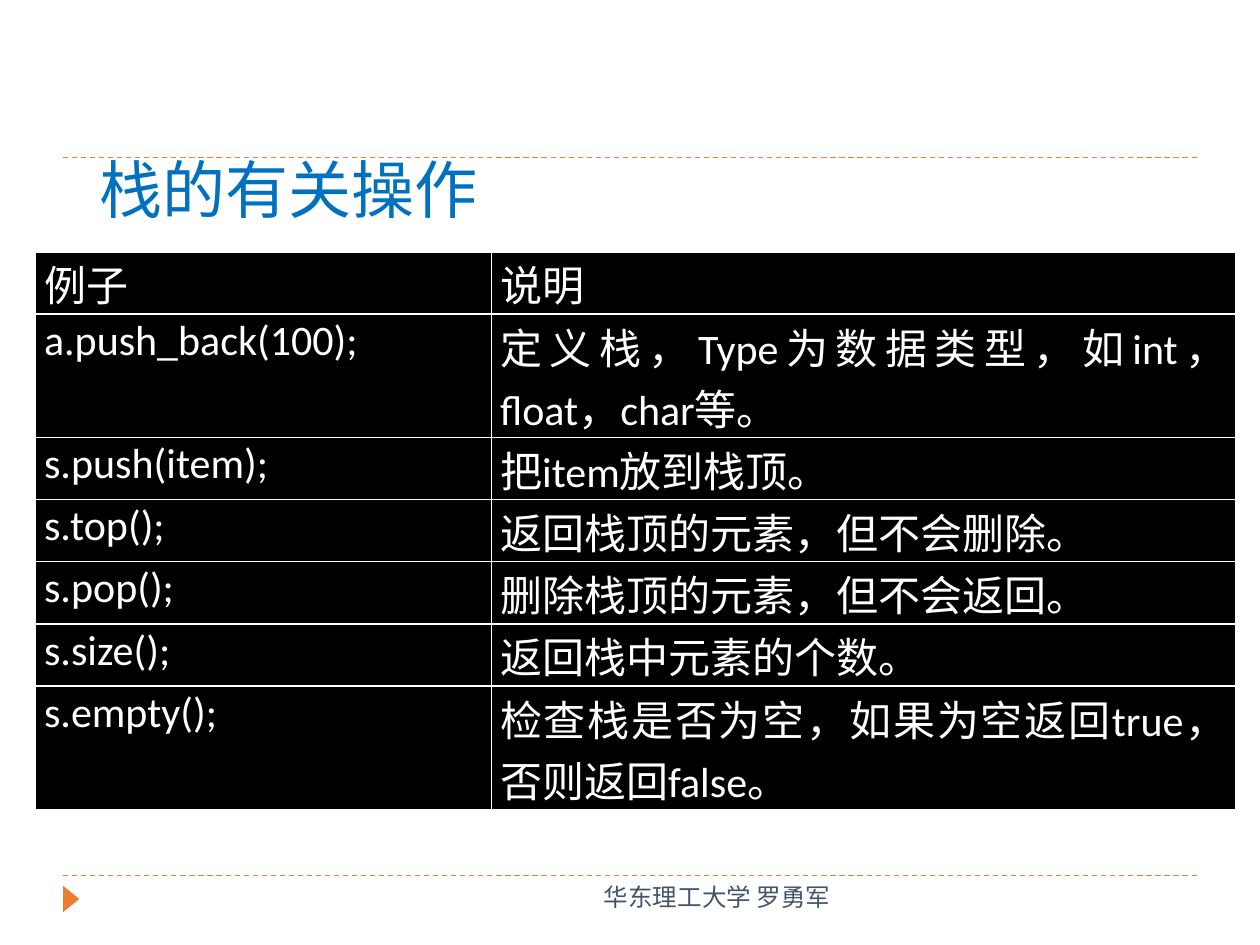
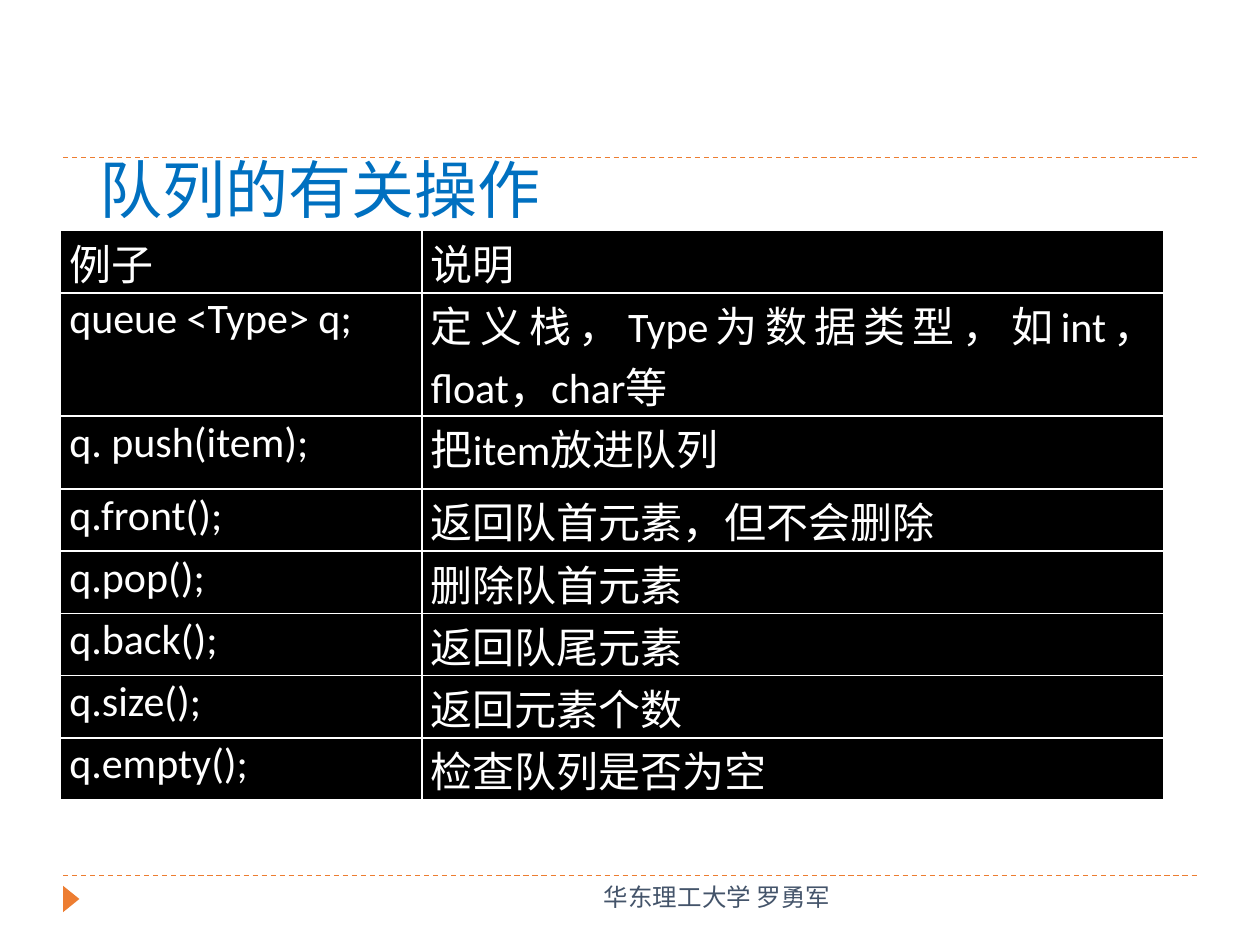
import pptx
import pptx.util
import pptx.dml.color
import pptx.enum.dml
import pptx.enum.shapes
import pptx.enum.text
import pptx.oxml.ns
import lxml.etree

SCALE = 9144  # EMU in one px, 100 px to the inch
FONT = "Calibri"
BLUE = pptx.dml.color.RGBColor(0x00, 0x70, 0xC0)
ORANGE = pptx.dml.color.RGBColor(0xED, 0x7D, 0x31)
SLATE = pptx.dml.color.RGBColor(0x44, 0x54, 0x6A)
BLACK = pptx.dml.color.RGBColor(0, 0, 0)
WHITE = pptx.dml.color.RGBColor(255, 255, 255)
ALIGN = pptx.enum.text.PP_ALIGN

STACK = [
    ("例子", "说明"),
    ("a.push_back(100);", "定义栈，Type为数据类型，如int，float，char等。"),
    ("s.push(item);", "把item放到栈顶。"),
    ("s.top();", "返回栈顶的元素，但不会删除。"),
    ("s.pop();", "删除栈顶的元素，但不会返回。"),
    ("s.size();", "返回栈中元素的个数。"),
    ("s.empty();", "检查栈是否为空，如果为空返回true，否则返回false。"),
]
QUEUE = [
    ("例子", "说明"),
    ("queue <Type> q;", "定义栈，Type为数据类型，如int，float，char等"),
    ("q. push(item);", "把item放进队列"),
    ("q.front();", "返回队首元素，但不会删除"),
    ("q.pop();", "删除队首元素"),
    ("q.back();", "返回队尾元素"),
    ("q.size();", "返回元素个数"),
    ("q.empty();", "检查队列是否为空"),
]


def px(*sizes):
    return [pptx.util.Emu(size * SCALE) for size in sizes]


def write(frame, text, size, color, align):
    frame.text = text
    para = frame.paragraphs[0]
    para.alignment = align
    font = para.font
    font.name, font.size, font.bold = FONT, pptx.util.Pt(size), False
    font.color.rgb = color
    return para


def add_rule(slide, y):
    rule = slide.shapes.add_connector(
        pptx.enum.shapes.MSO_CONNECTOR.STRAIGHT, *px(50, y, 950, y))
    rule.line.color.rgb = ORANGE
    rule.line.width = pptx.util.Pt(0.75)
    rule.line.dash_style = pptx.enum.dml.MSO_LINE.DASH
    lxml.etree.SubElement(rule._element.spPr, pptx.oxml.ns.qn("a:effectLst"))


def add_mark(slide):
    mark = slide.shapes.add_shape(
        pptx.enum.shapes.MSO_SHAPE.ISOSCELES_TRIANGLE, *px(46, 707, 21, 13))
    mark.rotation = 90
    mark.shadow.inherit = False
    mark.fill.solid()
    mark.fill.fore_color.rgb = ORANGE
    mark.line.fill.background()


def set_title(slide, text):
    title = slide.shapes.title
    title.left, title.top, title.width, title.height = px(69, 40, 863, 145)
    frame = title.text_frame
    frame.auto_size = pptx.enum.text.MSO_AUTO_SIZE.NONE
    frame.vertical_anchor = pptx.enum.text.MSO_ANCHOR.BOTTOM
    write(frame, text, 36, BLUE, ALIGN.LEFT).line_spacing = 0.9


def add_foot(slide):
    frame = slide.shapes.add_textbox(*px(331, 695, 338, 40)).text_frame
    frame.word_wrap = True
    write(frame, "华东理工大学 罗勇军", 14, SLATE, ALIGN.RIGHT)


def add_edges(cell):
    props = cell._tc.get_or_add_tcPr()
    for side in ("lnL", "lnR", "lnT", "lnB"):
        edge = lxml.etree.SubElement(
            props, pptx.oxml.ns.qn("a:" + side), w=str(pptx.util.Pt(1)))
        fill = lxml.etree.SubElement(edge, pptx.oxml.ns.qn("a:solidFill"))
        lxml.etree.SubElement(
            fill, pptx.oxml.ns.qn("a:srgbClr"), val=str(WHITE))


def fill_cell(cell, text):
    add_edges(cell)
    cell.fill.solid()
    cell.fill.fore_color.rgb = BLACK
    (cell.margin_left, cell.margin_top,
     cell.margin_right, cell.margin_bottom) = px(7, 1, 7, 0)
    write(cell.text_frame, text, 24, WHITE, ALIGN.JUSTIFY)


def add_grid(slide, left, top, widths, heights, rows):
    grid = slide.shapes.add_table(
        len(rows), len(widths),
        *px(left, top, sum(widths), sum(heights))).table
    grid.first_row = grid.horz_banding = False
    for col, width in zip(grid.columns, px(*widths)):
        col.width = width
    for row, height, texts in zip(grid.rows, px(*heights), rows):
        row.height = height
        for cell, text in zip(row.cells, texts):
            fill_cell(cell, text)


def add_page(deck, title, *grid):
    slide = deck.slides.add_slide(deck.slide_layouts[5])
    # Shared frame
    for y in (695, 125):
        add_rule(slide, y)
    add_mark(slide)
    # Content
    set_title(slide, title)
    add_grid(slide, *grid)
    add_foot(slide)


def main():
    deck = pptx.Presentation()
    deck.slide_width, deck.slide_height = px(1000, 750)
    add_page(deck, "栈的有关操作", 28, 200, (362, 591),
             (47, 93, 47, 47, 47, 47, 93), STACK)
    add_page(deck, "队列的有关操作", 48, 183, (287, 589),
             (48, 94, 58, 47, 48, 48, 48, 48), QUEUE)
    deck.save("out.pptx")


if __name__ == "__main__":
    main()
